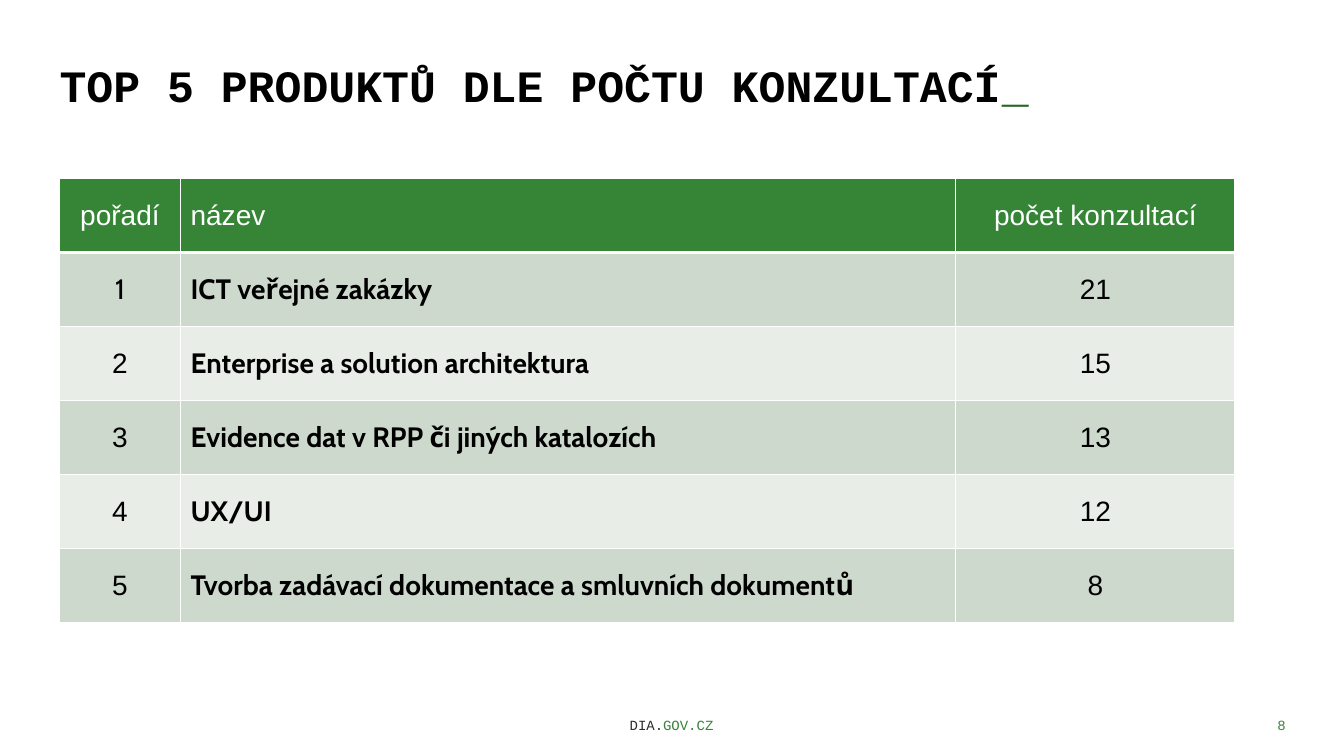
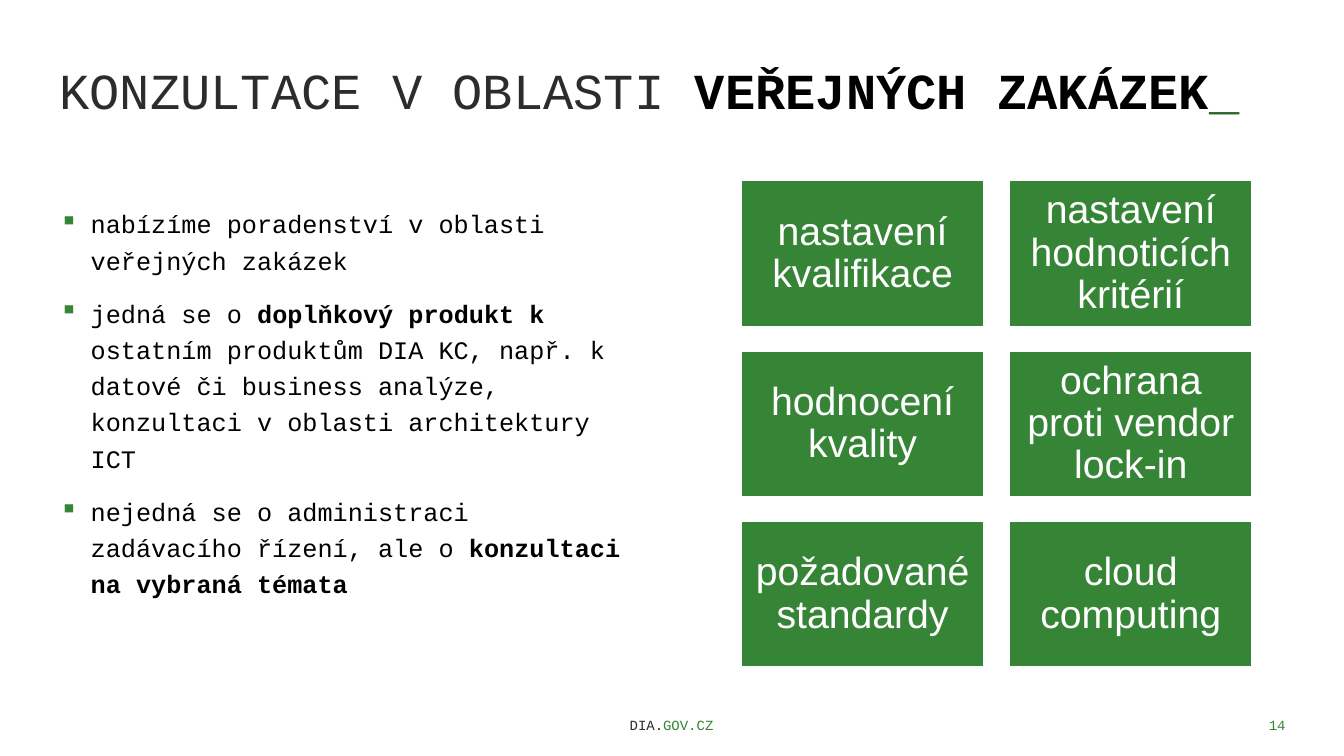
from lxml import etree
from pptx import Presentation
from pptx.dml.color import RGBColor
from pptx.enum.shapes import MSO_SHAPE
from pptx.enum.text import MSO_ANCHOR, MSO_AUTO_SIZE, PP_ALIGN
from pptx.oxml.ns import qn
from pptx.util import Emu, Pt

RECTANGLE = MSO_SHAPE.RECTANGLE
TOP, MIDDLE, BOTTOM = MSO_ANCHOR.TOP, MSO_ANCHOR.MIDDLE, MSO_ANCHOR.BOTTOM
LEFT, CENTER, RIGHT = PP_ALIGN.LEFT, PP_ALIGN.CENTER, PP_ALIGN.RIGHT
NO_AUTOFIT = MSO_AUTO_SIZE.NONE

EMU_PER_PX = 9144
PAGE_SIZE = (1333, 750)
TITLE_ONLY = 5
MONO, SANS, CABIN = "Courier New", "Arial", "Cabin"
GREEN, DARK_GREEN = "368537", "29652A"
BLACK, CHARCOAL, WHITE = "000000", "2E2C2B", "FFFFFF"
ROW_FILLS = ("CED9CE", "E8EDE8")
FOOTER_BOX = (372, 692, 588, 40)
NUMBER_BOX = (1075, 692, 210, 40)
CURSOR = ("_", {"color": DARK_GREEN, "bold": False})

PRODUCTS = [
    ("1", "ICT veřejné zakázky", "21"),
    ("2", "Enterprise a solution architektura", "15"),
    ("3", "Evidence dat v RPP či jiných katalozích", "13"),
    ("4", "UX/UI", "12"),
    ("5", "Tvorba zadávací dokumentace a smluvních dokumentů", "8"),
]
SERVICES = [
    [("nabízíme poradenství v oblasti veřejných zakázek", {})],
    [
        ("jedná se o ", {}),
        ("doplňkový produkt k", {"bold": True}),
        (" ostatním produktům DIA KC, např. k datové či business analýze, "
         "konzultaci v oblasti architektury ICT", {}),
    ],
    [
        ("nejedná se o administraci zadávacího řízení, ale o ", {}),
        ("konzultaci na vybraná témata", {"bold": True}),
    ],
]
TOPICS = [
    "nastavení kvalifikace", "nastavení hodnoticích kritérií",
    "hodnocení kvality", "ochrana proti vendor lock-in",
    "požadované standardy", "cloud computing",
]


def px(length):
    """Turn a length in px into EMU."""
    return Emu(round(length * EMU_PER_PX))


def rgb(value):
    """Turn a hex string into a colour."""
    return RGBColor.from_string(value)


def add_bullet(para, color, indent):
    """Give a paragraph a coloured square bullet with a hanging indent."""
    properties = para._p.get_or_add_pPr()
    properties.set("marL", str(px(indent)))
    properties.set("indent", str(-px(indent)))
    bullet_color = etree.SubElement(properties, qn("a:buClr"))
    etree.SubElement(bullet_color, qn("a:srgbClr"), val=color)
    etree.SubElement(properties, qn("a:buChar"), char="▪")


def write(frame, paragraphs, font=SANS, size=20, color=BLACK, bold=False,
          align=LEFT, spacing=1.0, before=0, after=0, bullet=None, indent=0):
    """Fill a text frame with a string or with paragraphs of styled spans."""
    if isinstance(paragraphs, str):
        paragraphs = [[(paragraphs, {})]]
    for index, spans in enumerate(paragraphs):
        para = frame.add_paragraph() if index else frame.paragraphs[0]
        if bullet:
            add_bullet(para, bullet, indent)
        para.alignment = align
        para.line_spacing = spacing
        para.space_before = Pt(before if index else 0)
        para.space_after = Pt(after)
        for text, style in spans:
            span = para.add_run()
            span.text = text
            span.font.name = font
            span.font.size = Pt(size)
            span.font.bold = style.get("bold", bold)
            span.font.color.rgb = rgb(style.get("color", color))


def set_frame(frame, anchor=TOP, insets=(0, 0)):
    """Set wrapping, anchor and the horizontal and vertical insets."""
    frame.word_wrap = True
    frame.auto_size = NO_AUTOFIT
    frame.vertical_anchor = anchor
    frame.margin_left = frame.margin_right = px(insets[0])
    frame.margin_top = frame.margin_bottom = px(insets[1])


def add_text(page, box, paragraphs, anchor=TOP, insets=(0, 0), **style):
    """Add a text box with its text."""
    frame = page.shapes.add_textbox(*map(px, box)).text_frame
    set_frame(frame, anchor, insets)
    write(frame, paragraphs, **style)


def add_page(deck, title_box, title, size, number):
    """Add a page with its title, footer and page number."""
    page = deck.slides.add_slide(deck.slide_layouts[TITLE_ONLY])
    holder = page.shapes.title
    holder.left, holder.top, holder.width, holder.height = map(px, title_box)
    set_frame(holder.text_frame)
    write(holder.text_frame, [title + [CURSOR]], font=MONO, size=size, spacing=1.2)
    footer = {"font": MONO, "size": 10, "color": GREEN,
              "anchor": BOTTOM, "insets": (10, 5)}
    address = [("DIA.", {"color": CHARCOAL}), ("GOV.CZ", {})]
    add_text(page, FOOTER_BOX, [address], align=CENTER, **footer)
    add_text(page, NUMBER_BOX, str(number), align=RIGHT, **footer)
    return page


def add_borders(cell, color, bottom):
    """Draw the four borders of a cell, the bottom one with its own width."""
    properties = cell._tc.get_or_add_tcPr()
    for side, width in (("L", 1), ("R", 1), ("T", 1), ("B", bottom)):
        line = etree.SubElement(properties, qn(f"a:ln{side}"), w=str(Pt(width)))
        fill = etree.SubElement(line, qn("a:solidFill"))
        etree.SubElement(fill, qn("a:srgbClr"), val=color)


def fill_cell(cell, text, fill, bottom=1, **style):
    """Set the text, fill and borders of a table cell."""
    cell.vertical_anchor = MIDDLE
    add_borders(cell, WHITE, bottom)
    cell.fill.solid()
    cell.fill.fore_color.rgb = rgb(fill)
    write(cell.text_frame, text, **style)


def add_ranking(page, box, widths, headings, rows):
    """Add the ranking table with a green heading and banded rows."""
    table = page.shapes.add_table(len(rows) + 1, len(widths), *map(px, box)).table
    table.first_row = table.horz_banding = False
    aligns = (CENTER, LEFT, CENTER)
    for index, (width, heading) in enumerate(zip(widths, headings)):
        table.columns[index].width = px(width)
        fill_cell(table.cell(0, index), heading, GREEN, bottom=3,
                  color=WHITE, align=aligns[index])
    for row_index, row in enumerate(rows):
        for index, text in enumerate(row):
            is_cabin = index == 1 or (row_index, index) == (0, 0)
            fill_cell(table.cell(row_index + 1, index), text,
                      ROW_FILLS[row_index % 2], align=aligns[index],
                      font=CABIN if is_cabin else SANS, bold=index == 1)


def add_tiles(page, box, labels, columns, gaps):
    """Add a grid of equal green tiles that fills the box."""
    left, top, width, height = box
    rows = len(labels) // columns
    tile_width = (width - gaps[0] * (columns - 1)) / columns
    tile_height = (height - gaps[1] * (rows - 1)) / rows
    for index, label in enumerate(labels):
        row, column = divmod(index, columns)
        place = (left + column * (tile_width + gaps[0]),
                 top + row * (tile_height + gaps[1]), tile_width, tile_height)
        tile = page.shapes.add_shape(RECTANGLE, *map(px, place))
        tile.shadow.inherit = False
        tile.fill.solid()
        tile.fill.fore_color.rgb = rgb(GREEN)
        tile.line.color.rgb = rgb(WHITE)
        tile.line.width = Pt(1.5)
        set_frame(tile.text_frame, MIDDLE, (12, 12))
        write(tile.text_frame, label, size=28, color=WHITE, align=CENTER, spacing=0.9)


def build_ranking_page(deck):
    """Build the page with the most consulted products."""
    title = [("TOP 5 PRODUKTŮ DLE POČTU KONZULTACÍ", {"bold": True})]
    page = add_page(deck, (59, 47, 1215, 128), title, 32, 8)
    add_ranking(page, (59, 177, 1166, 441), (120, 769, 277),
                ("pořadí", "název", "počet konzultací"), PRODUCTS)


def build_procurement_page(deck):
    """Build the page about consultations on public procurement."""
    title = [("KONZULTACE V OBLASTI ", {"color": CHARCOAL}),
             ("VEŘEJNÝCH ZAKÁZEK", {"bold": True})]
    page = add_page(deck, (59, 47, 1215, 83), title, 36, 14)
    add_text(page, (59, 201, 571, 450), SERVICES, font=MONO, size=18,
             spacing=1.2, before=8, after=4, bullet=GREEN, indent=31)
    add_tiles(page, (735, 179, 507, 483), TOPICS, 2, (25, 24))


def main():
    """Build and save the deck."""
    deck = Presentation()
    deck.slide_width, deck.slide_height = map(px, PAGE_SIZE)
    build_ranking_page(deck)
    build_procurement_page(deck)
    deck.save("out.pptx")


if __name__ == "__main__":
    main()
